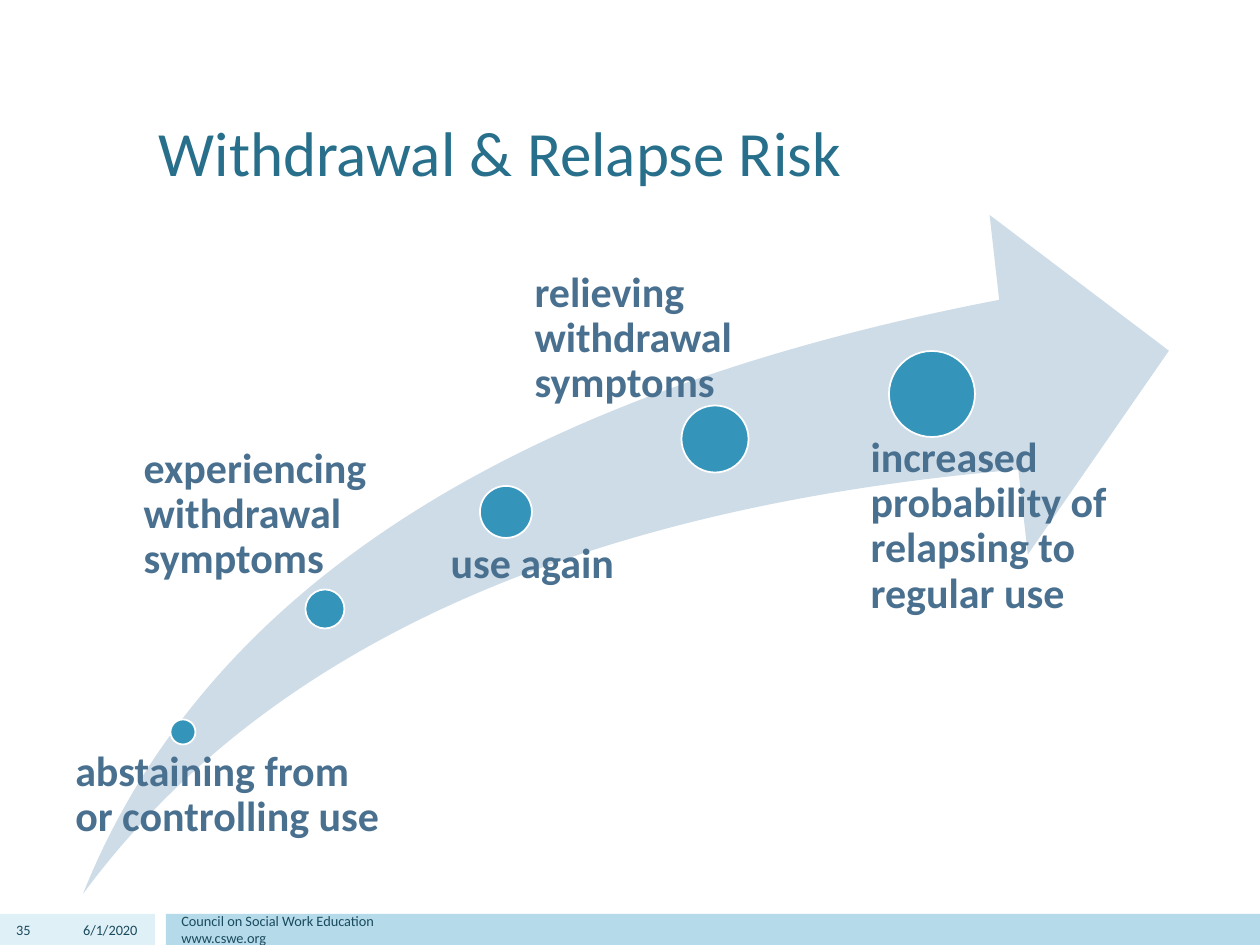
from lxml import etree
from pptx import Presentation
from pptx import util as u
from pptx.dml.color import RGBColor
from pptx.enum import shapes, text

PX = 914400 / 126  # EMU in one px
FONT = "Calibri"
HUES = {
    "title": "276F8B", "label": "4A7090", "foot": "1A4A5D",
    "swoosh": "CEDCE7", "dot": "3494BA", "white": "FFFFFF",
    "pale": "DFF0F6", "band": "B5DBEA",
}
KIND = shapes.MSO_SHAPE
ALIGN = text.PP_ALIGN
ANCHOR = text.MSO_ANCHOR

# Dot centre and diameter, label box and lines, all relative to the swoosh
STEPS = [
    (100, 517, 25, (-21, 535, 335, 112), ["abstaining from", "or controlling use"]),
    (242, 394, 39, (40, 232, 267, 141), ["experiencing withdrawal symptoms"]),
    (423, 297, 52, (340, 327, 209, 116), ["use again"]),
    (632, 224, 67, (416, 56, 256, 150), ["relieving withdrawal symptoms"]),
    (849, 179, 86, (742, 221, 309, 258),
     ["increased probability of relapsing to regular use"]),
]


def px(*vals):
    return [u.Emu(round(v * PX)) for v in vals]


def hue(name):
    return RGBColor.from_string(HUES[name])


def shape(slide, kind, box, fill, line=None):
    form = slide.shapes.add_shape(kind, *px(*box))
    form.shadow.inherit = False
    form.fill.solid()
    form.fill.fore_color.rgb = hue(fill)
    if line:
        form.line.color.rgb = hue(line)
        form.line.width = u.Pt(1)
    else:
        form.line.fill.background()
    return form


def write(para, lines, size, color, bold=False):
    for i, line in enumerate(lines):
        if i:
            para.add_line_break()
        run = para.add_run()
        run.text = line
        run.font.name = FONT
        run.font.size = u.Pt(size)
        run.font.bold = bold
        run.font.color.rgb = hue(color)


def frame(slide, box):
    body = slide.shapes.add_textbox(*px(*box)).text_frame
    body.word_wrap = True
    return body


def title(slide, box):
    head = slide.shapes.title
    head.left, head.top, head.width, head.height = px(*box)
    body = head.text_frame
    body.vertical_anchor = ANCHOR.BOTTOM
    para = body.paragraphs[0]
    para.alignment = ALIGN.LEFT
    write(para, ["Withdrawal & Relapse Risk"], 36, "title")


def footer(slide, box):
    x, y, w, h = box
    shape(slide, KIND.RECTANGLE, (x, y, 155, h), "pale")
    shape(slide, KIND.RECTANGLE, (x + 166, y, w - 166, h), "band")
    parts = [
        (0, 43, ALIGN.RIGHT, ["35"]),
        (47, 103, ALIGN.RIGHT, ["6/1/2020"]),
        (169, 945, ALIGN.LEFT, ["Council on Social Work Education", "www.cswe.org"]),
    ]
    for left, wide, align, lines in parts:
        body = frame(slide, (x + left, y, wide, h))
        body.vertical_anchor = ANCHOR.MIDDLE
        para = body.paragraphs[0]
        para.alignment = align
        write(para, lines, 8.2, "foot")


def label(slide, box, inset, lines):
    body = frame(slide, box)
    body.margin_left, = px(inset)
    body.margin_top = body.margin_right = body.margin_bottom = 0
    para = body.paragraphs[0]
    para.line_spacing = 0.9
    write(para, lines, 24, "label", True)


def swoosh(slide, box):
    """Rising arrow with dots that grow along it, each with its label."""
    x, y = box[:2]
    arrow = shape(slide, KIND.SWOOSH_ARROW, box, "swoosh")
    arrow.adjustments[0] = arrow.adjustments[1] = 0.25
    for cx, cy, size, (left, top, w, h), lines in STEPS:
        dot = (x + cx - size / 2, y + cy - size / 2, size, size)
        shape(slide, KIND.OVAL, dot, "dot", "white")
        label(slide, (x + left, y + top, w, h), size * 0.53, lines)


def main():
    deck = Presentation()
    deck.slide_width, deck.slide_height = px(1260, 945)
    slide = deck.slides.add_slide(deck.slide_layouts[5])
    footer(slide, (0, 914, 1260, 31))
    title(slide, (146, 33, 969, 162))
    swoosh(slide, (83, 215, 1086, 679))
    deck.save("out.pptx")


if __name__ == "__main__":
    main()
